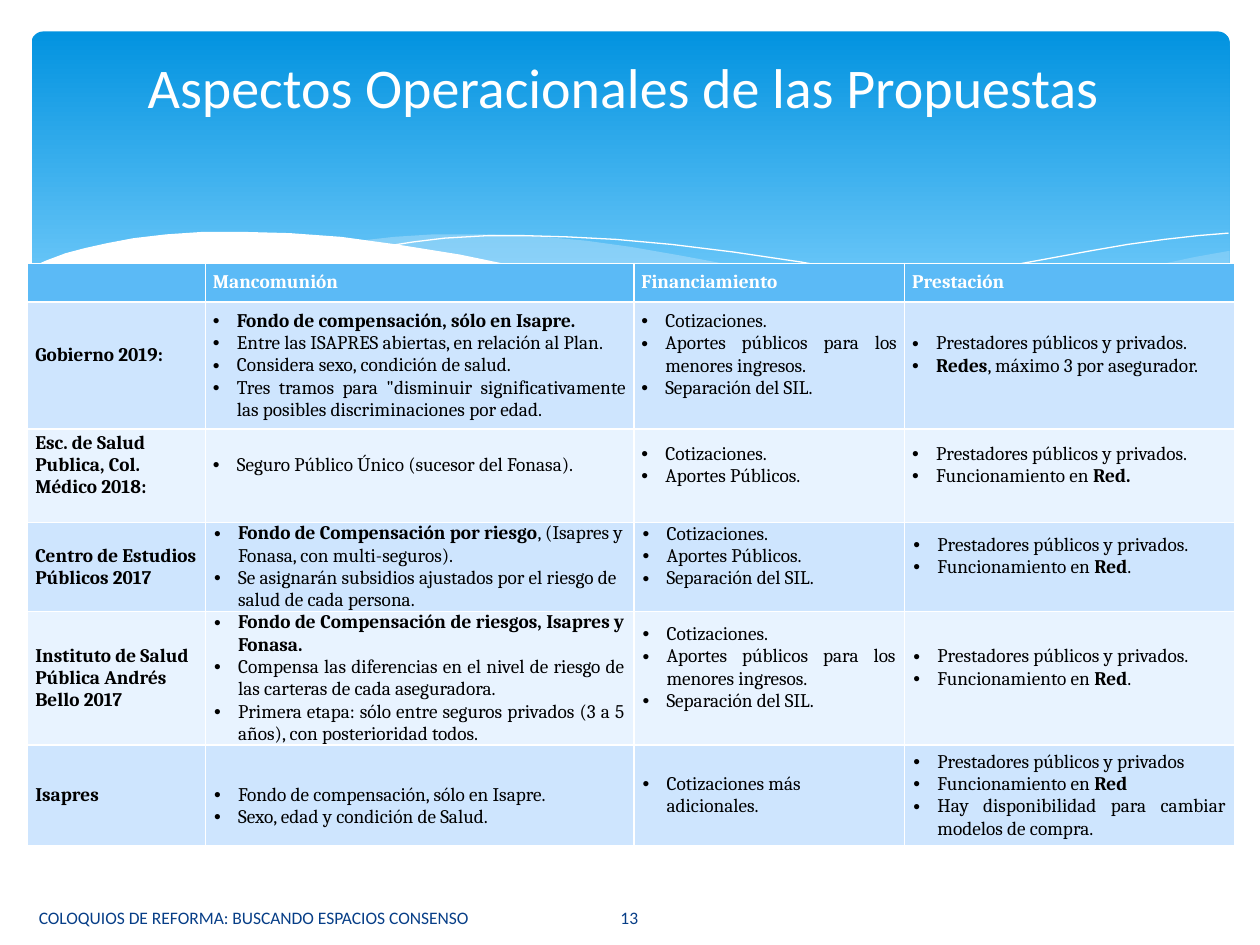
from lxml.etree import SubElement
from pptx import Presentation
from pptx.dml.color import RGBColor
from pptx.enum.shapes import MSO_SHAPE
from pptx.enum.text import MSO_ANCHOR, MSO_AUTO_SIZE, PP_ALIGN
from pptx.oxml.ns import qn
from pptx.util import Inches, Pt

COLORS = {
    "white": "FFFFFF", "black": "000000", "footer": "073E87",
    "sky top": "0293E0", "sky bottom": "83D3FE", "mist": "C6E7FC",
    "header": "5BBAF6", "odd row": "CEE5FE", "even row": "E8F3FF",
}


def color(name):
    return RGBColor.from_string(COLORS[name])


def write(paragraph, text, size=11, font="Cambria", ink="black", bold=False,
          align=PP_ALIGN.LEFT, bullet=False):
    """Fill a paragraph; text between ** marks switches to bold."""
    paragraph.alignment = align
    for index, part in enumerate(text.split("**")):
        if part:
            run = paragraph.add_run()
            run.text = part
            run.font.size = Pt(size)
            run.font.name = font
            run.font.bold = bold or index % 2 == 1
            run.font.color.rgb = color(ink)
    if bullet:
        properties = paragraph._p.get_or_add_pPr()
        properties.set("marL", str(Inches(0.19)))
        properties.set("indent", str(-Inches(0.19)))
        SubElement(properties, qn("a:buFont")).set("typeface", "Arial")
        SubElement(properties, qn("a:buChar")).set("char", "•")


presentation = Presentation()
presentation.slide_width = Inches(10)
presentation.slide_height = Inches(7.5)
slide = presentation.slides.add_slide(presentation.slide_layouts[5])
shapes = slide.shapes

# Blue banner
banner = shapes.add_shape(MSO_SHAPE.ROUNDED_RECTANGLE, Inches(0.25), Inches(0.25),
                          Inches(9.51), Inches(2.7))
banner.adjustments[0] = 0.034
banner.shadow.inherit = False
banner.line.fill.background()
banner.fill.gradient()
banner.fill.gradient_angle = 270
for stop, position, name in zip(banner.fill.gradient_stops, (0, 0.9),
                                ("sky top", "sky bottom")):
    stop.position = position
    stop.color.rgb = color(name)

# Waves: points, fill, opacity in percent; a wave without fill is a thin line
waves = [
    ([(9.76, 1.99), (9.48, 2.04), (9.06, 2.13), (8.61, 2.23), (8.05, 2.37),
      (7.53, 2.48), (7.06, 2.57), (6.61, 2.65), (6.91, 2.69), (7.32, 2.74),
      (7.69, 2.77), (8.14, 2.78), (8.54, 2.76), (8.89, 2.72), (9.21, 2.65),
      (9.49, 2.57), (9.76, 2.47)], "mist", 29),
    ([(8.93, 2.73), (8.37, 2.65), (7.75, 2.54), (7.06, 2.4), (6.29, 2.22),
      (5.84, 2.11), (5.41, 2.03), (5.01, 1.96), (4.65, 1.91), (4.2, 1.87),
      (3.8, 1.86), (3.44, 1.86), (3.13, 1.88), (2.86, 1.91), (3.23, 1.96),
      (3.62, 2.03), (4.04, 2.11), (4.49, 2.22), (5.3, 2.4), (5.84, 2.52),
      (6.34, 2.61), (6.8, 2.68), (7.22, 2.74), (7.61, 2.77), (8.07, 2.78),
      (8.48, 2.77)], "mist", 40),
    ([(3.09, 1.95), (3.28, 1.92), (3.53, 1.89), (3.87, 1.87), (4.16, 1.87),
      (4.5, 1.88), (4.89, 1.9), (5.33, 1.94), (5.82, 2), (6.36, 2.08),
      (6.95, 2.19), (7.6, 2.33), (8.31, 2.51), (9.07, 2.72)], None, 100),
    ([(6.13, 2.57), (6.52, 2.46), (6.95, 2.35), (7.48, 2.23), (8.06, 2.1),
      (8.66, 1.99), (8.95, 1.94), (9.24, 1.9), (9.51, 1.87), (9.75, 1.85)],
     None, 100),
    ([(9.77, 2.46), (9.5, 2.56), (9.2, 2.65), (8.87, 2.71), (8.5, 2.75),
      (8.09, 2.77), (7.61, 2.75), (7.08, 2.7), (6.47, 2.62), (5.79, 2.5),
      (5.29, 2.39), (4.75, 2.27), (4.18, 2.13), (3.65, 2.02), (3.15, 1.94),
      (2.71, 1.88), (2.3, 1.85), (1.93, 1.84), (1.61, 1.84), (1.32, 1.86),
      (1.06, 1.89), (0.85, 1.93), (0.67, 1.97), (0.52, 2.01), (0.36, 2.07),
      (0.23, 2.13), (0.23, 3.29), (9.77, 3.29)], "white", 100),
]
for points, fill, opacity in waves:
    start, *others = [(Inches(x), Inches(y)) for x, y in points]
    builder = shapes.build_freeform(*start)
    builder.add_line_segments(others, close=fill is not None)
    wave = builder.convert_to_shape()
    wave.shadow.inherit = False
    if fill:
        wave.line.fill.background()
        wave.fill.solid()
        wave.fill.fore_color.rgb = color(fill)
        if opacity < 100:
            tint = wave.element.spPr.find(".//" + qn("a:srgbClr"))
            SubElement(tint, qn("a:alpha")).set("val", str(opacity * 1000))
    else:
        wave.fill.background()
        wave.line.color.rgb = color("white")
        wave.line.width = 0

# Comparison table: a string is a row label, a list holds bullets
headings = ["", "Mancomunión", "Financiamiento", "Prestación"]
providers = "Prestadores públicos y privados."
income = ["Cotizaciones.", "Aportes públicos para los menores ingresos.",
          "Separación del SIL."]
proposals = [
    ["Gobierno 2019:",
     ["**Fondo de compensación, sólo en Isapre.**",
      "Entre las ISAPRES abiertas, en relación al Plan.",
      "Considera sexo, condición de salud.",
      "Tres tramos para \"disminuir significativamente las posibles "
      "discriminaciones por edad."],
     income,
     [providers, "**Redes**, máximo 3 por asegurador."]],
    ["Esc. de Salud Publica, Col. Médico 2018:",
     ["Seguro Público Único (sucesor del Fonasa)."],
     ["Cotizaciones.", "Aportes Públicos."],
     [providers, "Funcionamiento en **Red.**"]],
    ["Centro de Estudios Públicos 2017",
     ["**Fondo de Compensación por riesgo**, (Isapres y Fonasa, con multi-seguros).",
      "Se asignarán subsidios ajustados por el riesgo de salud de cada persona."],
     ["Cotizaciones.", "Aportes Públicos.", "Separación del SIL."],
     [providers, "Funcionamiento en **Red**."]],
    ["Instituto de Salud Pública Andrés Bello 2017",
     ["**Fondo de Compensación de riesgos, Isapres y Fonasa.**",
      "Compensa las diferencias en el nivel de riesgo de las carteras de cada "
      "aseguradora.",
      "Primera etapa: sólo entre seguros privados (3 a 5 años), con "
      "posterioridad todos."],
     income,
     [providers, "Funcionamiento en **Red**."]],
    ["Isapres",
     ["Fondo de compensación, sólo en Isapre.", "Sexo, edad y condición de Salud."],
     ["Cotizaciones más adicionales."],
     ["Prestadores públicos y privados", "Funcionamiento en **Red**",
      "Hay disponibilidad para cambiar modelos de compra."]],
]
justified = {(1, 1), (1, 2), (4, 1), (4, 2), (4, 3), (5, 1), (5, 3)}
raised = {(1, 0), (1, 2), (1, 3), (2, 0), (2, 1), (2, 2), (2, 3),
          (3, 2), (3, 3), (4, 2), (4, 3)}
lowered = {(5, 1)}

table = shapes.add_table(6, 4, Inches(0.22), Inches(2.09),
                         Inches(9.58), Inches(4.46)).table
for column, width in zip(table.columns, (1.41, 3.4, 2.15, 2.62)):
    column.width = Inches(width)
for row, height in zip(table.rows, (0.23, 1.01, 0.74, 0.67, 1.01, 0.8)):
    row.height = Inches(height)
for r, entries in enumerate([headings] + proposals):
    for c, entry in enumerate(entries):
        cell = table.cell(r, c)
        cell.vertical_anchor = MSO_ANCHOR.MIDDLE
        cell.margin_left = cell.margin_right = Inches(0.07 if r > 2 and c else 0.06)
        cell.margin_top = Inches(0.17 if (r, c) in lowered else 0)
        cell.margin_bottom = Inches(0.17 if (r, c) in raised else 0)
        cell.fill.solid()
        cell.fill.fore_color.rgb = color(
            "header" if r == 0 else "odd row" if r % 2 else "even row")
        frame = cell.text_frame
        if isinstance(entry, str):
            write(frame.paragraphs[0], entry, bold=True,
                  ink="black" if r else "white")
            continue
        align = PP_ALIGN.JUSTIFY if (r, c) in justified else PP_ALIGN.LEFT
        for index, item in enumerate(entry):
            paragraph = frame.add_paragraph() if index else frame.paragraphs[0]
            write(paragraph, item, align=align, bullet=True)

# Title, brought in front of the banner
title = shapes.title
title.left, title.top = Inches(0.5), Inches(0.37)
title.width, title.height = Inches(9), Inches(0.63)
title.text_frame.auto_size = MSO_AUTO_SIZE.NONE
title.text_frame.vertical_anchor = MSO_ANCHOR.MIDDLE
write(title.text_frame.paragraphs[0], "Aspectos Operacionales de las Propuestas ",
      size=32, font="Calibri", ink="white", align=PP_ALIGN.CENTER)
title.element.getparent().append(title.element)

# Footer and page number
for left, width, text, align in [
    (0.21, 4.14, "COLOQUIOS DE REFORMA: BUSCANDO ESPACIOS CONSENSO", PP_ALIGN.LEFT),
    (4.36, 1.27, "13", PP_ALIGN.CENTER),
]:
    frame = shapes.add_textbox(Inches(left), Inches(7.08),
                               Inches(width), Inches(0.4)).text_frame
    frame.word_wrap = True
    frame.vertical_anchor = MSO_ANCHOR.MIDDLE
    write(frame.paragraphs[0], text, size=10, font="Calibri", ink="footer", align=align)

presentation.save("out.pptx")
